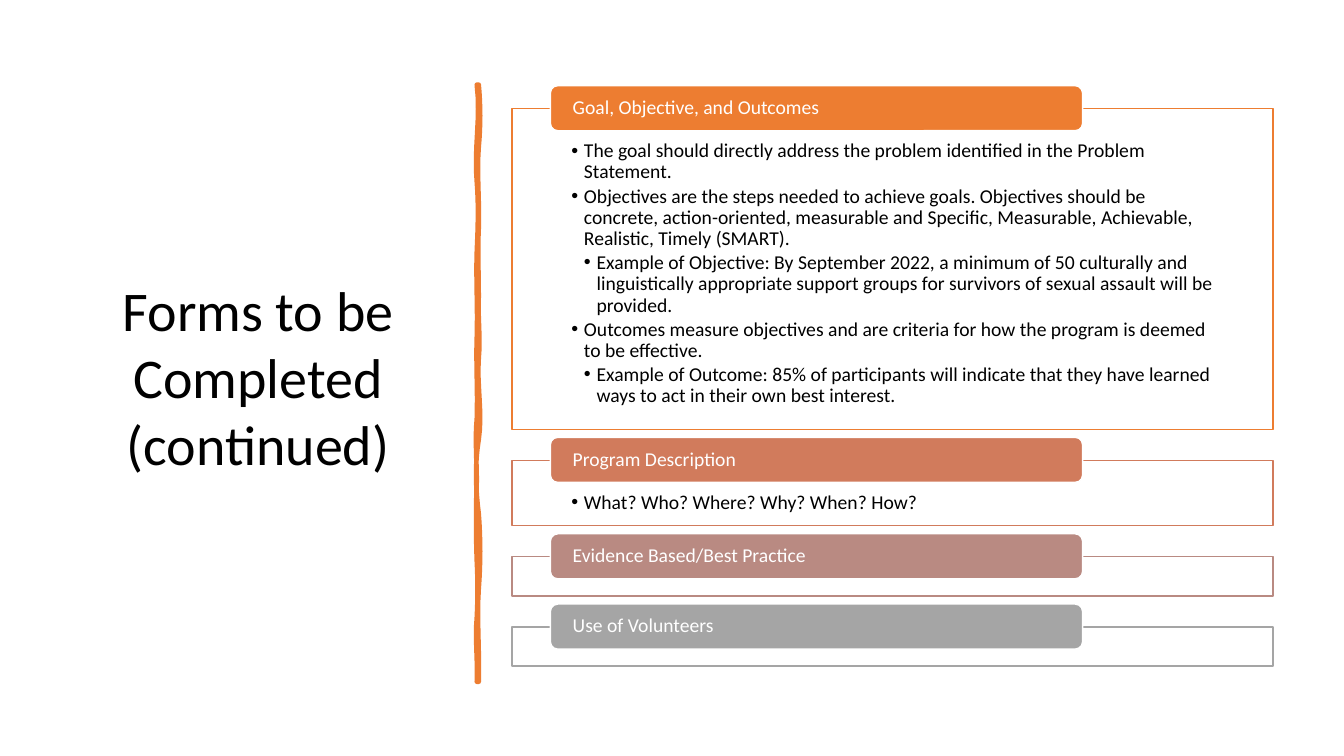
from dataclasses import dataclass

from lxml import etree
from pptx import Presentation
from pptx.dml.color import RGBColor
from pptx.enum import shapes, text
from pptx.oxml import ns
from pptx.util import Pt


@dataclass(frozen=True)
class Theme:
    font: str = "Calibri"
    title_size: float = 40
    body_size: float = 14
    ink: str = "000000"
    paper: str = "FFFFFF"
    accent: str = "ED7D31"


theme = Theme()


def paint(shape, fill, line, width):
    shape.shadow.inherit = False
    shape.fill.solid()
    shape.fill.fore_color.rgb = RGBColor.from_string(fill)
    shape.line.color.rgb = RGBColor.from_string(line)
    shape.line.width = Pt(width)


def write(paragraph, words, size, color):
    run = paragraph.add_run()
    run.text = words
    run.font.name = theme.font
    run.font.size = Pt(size)
    run.font.color.rgb = RGBColor.from_string(color)


# Each section: heading, colour, frame height, list of (level, words)
sections = [
    ("Goal, Objective, and Outcomes", theme.accent, 229, [
        (0, "The goal should directly address the problem identified in the Problem Statement."),
        (0, "Objectives are the steps needed to achieve goals. Objectives should be concrete, "
            "action-oriented, measurable and Specific, Measurable, Achievable, Realistic, "
            "Timely (SMART)."),
        (1, "Example of Objective: By September 2022, a minimum of 50 culturally and "
            "linguistically appropriate support groups for survivors of sexual assault "
            "will be provided."),
        (0, "Outcomes measure objectives and are criteria for how the program is deemed "
            "to be effective."),
        (1, "Example of Outcome: 85% of participants will indicate that they have learned "
            "ways to act in their own best interest."),
    ]),
    ("Program Description", "D17B5C", 46.7, [(0, "What? Who? Where? Why? When? How?")]),
    ("Evidence Based/Best Practice", "B98A82", 28, []),
    ("Use of Volunteers", "A5A5A5", 28, []),
]

deck = Presentation()
deck.slide_width, deck.slide_height = Pt(960), Pt(540)
slide = deck.slides.add_slide(deck.slide_layouts.get_by_name("Two Content"))
title, *lists = slide.placeholders

# Title
title.left, title.top, title.width, title.height = Pt(50.4), Pt(192.2), Pt(267.8), Pt(152.6)
title.text_frame.word_wrap = True
title.text_frame.auto_size = text.MSO_AUTO_SIZE.NONE
heading = title.text_frame.paragraphs[0]
heading.alignment = text.PP_ALIGN.CENTER
write(heading, "Forms to be Completed (continued)", theme.title_size, theme.ink)

# Hand-drawn divider: per edge, its x and (first bend, second bend, end y)
divider_top = 60.5
edges = [
    (342, [(1.4, 1.4, 105), (-1.4, 0.7, 163), (-0.7, 0, 212), (-0.7, 1.4, 256),
           (-1.4, 2.9, 314), (-2.9, -2.2, 367), (1.4, 1.4, 420.5), (-1.4, 0.7, 487)]),
    (340.6, [(0.7, -1.4, 441), (0.7, 0.7, 401), (-0.7, -0.7, 343.5), (0, -1.4, 299),
             (0.7, -0.7, 241), (0.7, -0.7, 180), (0.7, 1.4, 130), (-2.2, 2.9, divider_top)]),
]
steps = 8
outline = []
y = divider_top
for edge_x, bends in edges:
    outline.append((Pt(edge_x), Pt(y)))
    for first, second, end_y in bends:
        for step in range(1, steps + 1):
            t = step / steps
            sway = 3 * t * (1 - t) * ((1 - t) * first + t * second)
            outline.append((Pt(edge_x + sway), Pt(y + t * (end_y - y))))
        y = end_y
builder = slide.shapes.build_freeform(*outline[0])
builder.add_line_segments(outline[1:], close=True)
paint(builder.convert_to_shape(), theme.accent, theme.accent, 3.25)

# Framed sections, each with a tab over its top edge
frame_left, frame_width, frame_gap = 365.8, 543.6, 22.2
tab_left, tab_width, tab_height, tab_rise = 393.1, 380.2, 32.2, 16.4
indent = 9
frame_top = 77.6
for name, color, frame_height, items in sections:
    box = Pt(frame_left), Pt(frame_top), Pt(frame_width), Pt(frame_height)
    if items:
        frame = lists.pop(0)
        frame.left, frame.top, frame.width, frame.height = box
    else:
        frame = slide.shapes.add_shape(shapes.MSO_SHAPE.RECTANGLE, *box)
    paint(frame, theme.paper, color, 1)
    white = frame.fill._xPr.find(".//" + ns.qn("a:srgbClr"))
    etree.SubElement(white, ns.qn("a:alpha"), val="90000")

    body = frame.text_frame
    body.word_wrap = True
    body.auto_size = text.MSO_AUTO_SIZE.NONE
    body.margin_left = body.margin_right = Pt(42.3)
    body.margin_top, body.margin_bottom = Pt(23), Pt(8)
    for number, (level, words) in enumerate(items):
        item = body.add_paragraph() if number else body.paragraphs[0]
        item.level = level
        item.line_spacing = 0.9
        item.space_before, item.space_after = Pt(0), Pt(2.1)
        properties = item._p.get_or_add_pPr()
        properties.set("marL", str(Pt(indent * (level + 1))))
        properties.set("indent", str(-Pt(indent)))
        etree.SubElement(properties, ns.qn("a:buChar"), char="•")
        write(item, words, theme.body_size, theme.ink)

    tab = slide.shapes.add_shape(
        shapes.MSO_SHAPE.ROUNDED_RECTANGLE,
        Pt(tab_left), Pt(frame_top - tab_rise), Pt(tab_width), Pt(tab_height))
    paint(tab, color, theme.paper, 1)
    label = tab.text_frame
    label.word_wrap = True
    label.vertical_anchor = text.MSO_ANCHOR.MIDDLE
    label.margin_left = label.margin_right = Pt(14.4)
    label.margin_top = label.margin_bottom = Pt(0)
    label.paragraphs[0].alignment = text.PP_ALIGN.LEFT
    label.paragraphs[0].line_spacing = 0.9
    write(label.paragraphs[0], name, theme.body_size, theme.paper)

    frame_top += frame_height + frame_gap

deck.save("out.pptx")
